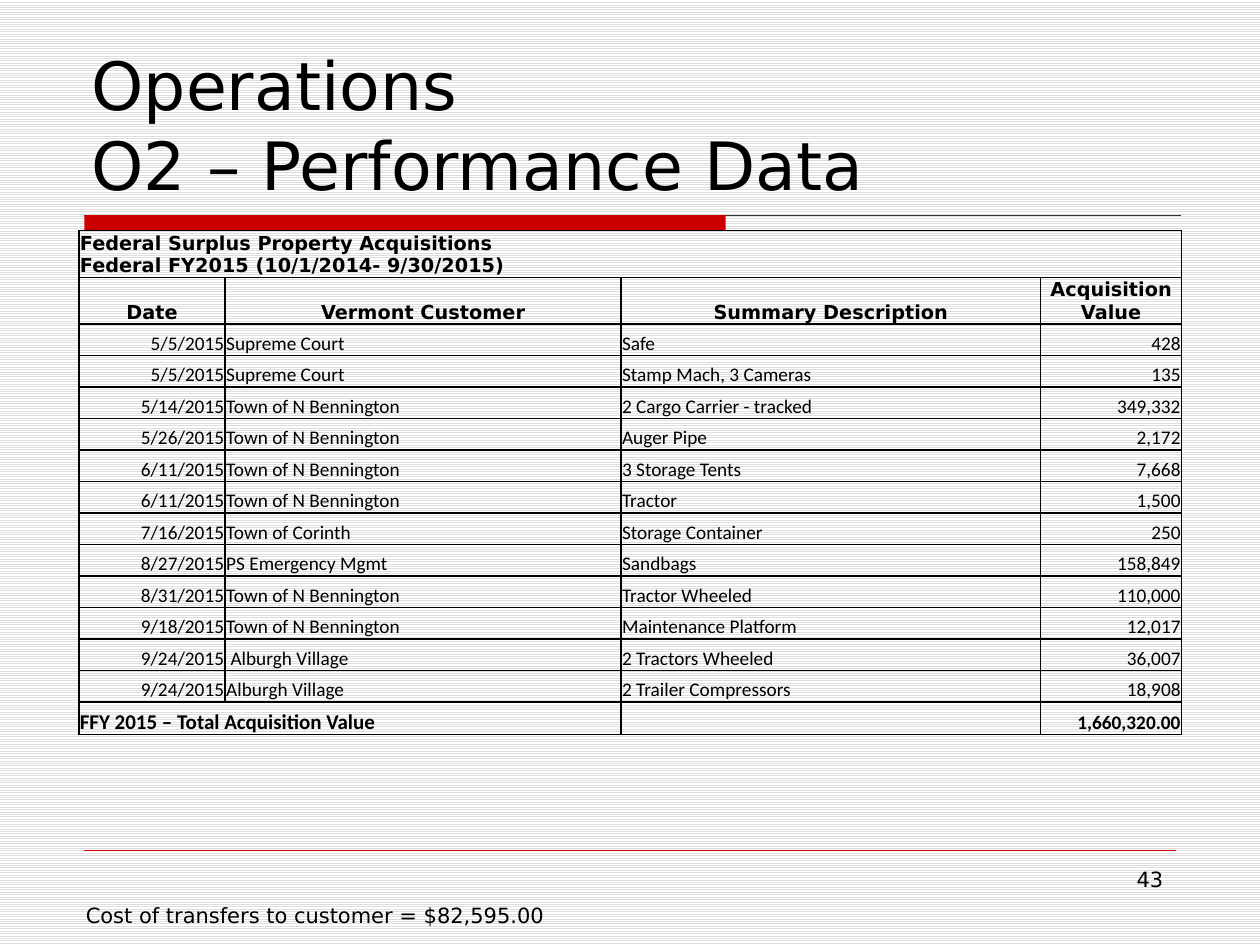
from dataclasses import dataclass

from lxml import etree
from pptx import Presentation
from pptx.dml.color import RGBColor
from pptx.enum.dml import MSO_PATTERN
from pptx.enum.shapes import MSO_CONNECTOR, MSO_SHAPE
from pptx.enum.text import MSO_ANCHOR, MSO_AUTO_SIZE, PP_ALIGN
from pptx.oxml.ns import qn
from pptx.util import Cm, Pt

LEFT, CENTER, RIGHT = PP_ALIGN.LEFT, PP_ALIGN.CENTER, PP_ALIGN.RIGHT
BOTTOM, TOP = MSO_ANCHOR.BOTTOM, MSO_ANCHOR.TOP
RECTANGLE, STRAIGHT = MSO_SHAPE.RECTANGLE, MSO_CONNECTOR.STRAIGHT
TITLE_ONLY = 5

SANS, BODY = "DejaVu Sans", "Calibri"
BLACK, RED, DARK = "000000", "CC0000", "333333"

TABLE_TITLE = "Federal Surplus Property Acquisitions\nFederal FY2015 (10/1/2014- 9/30/2015)"
HEADERS = ["Date", "Vermont Customer", "Summary Description", "Acquisition Value"]
COL_WIDTHS = [2.95, 7.98, 8.46, 2.84]
COL_ALIGNS = [RIGHT, LEFT, LEFT, RIGHT]
HEADER_HEIGHT, BODY_HEIGHT, TOTAL_HEIGHT = 0.94, 7.62 / 12, 0.66


@dataclass
class Acquisition:
    date: str
    customer: str
    item: str
    value: str


@dataclass
class Rule:
    x1: float
    x2: float
    y: float
    color: str
    width: float


@dataclass
class Style:
    font: str
    size: float
    bold: bool = False
    align: PP_ALIGN = LEFT


ACQUISITIONS = [
    Acquisition("5/5/2015", "Supreme Court", "Safe", "428"),
    Acquisition("5/5/2015", "Supreme Court", "Stamp Mach, 3 Cameras", "135"),
    Acquisition("5/14/2015", "Town of N Bennington", "2 Cargo Carrier - tracked", "349,332"),
    Acquisition("5/26/2015", "Town of N Bennington", "Auger Pipe", "2,172"),
    Acquisition("6/11/2015", "Town of N Bennington", "3 Storage Tents", "7,668"),
    Acquisition("6/11/2015", "Town of N Bennington", "Tractor", "1,500"),
    Acquisition("7/16/2015", "Town of Corinth", "Storage Container", "250"),
    Acquisition("8/27/2015", "PS Emergency Mgmt", "Sandbags", "158,849"),
    Acquisition("8/31/2015", "Town of N Bennington", "Tractor Wheeled", "110,000"),
    Acquisition("9/18/2015", "Town of N Bennington", "Maintenance Platform", "12,017"),
    Acquisition("9/24/2015", " Alburgh Village", "2 Tractors Wheeled", "36,007"),
    Acquisition("9/24/2015", "Alburgh Village", "2 Trailer Compressors", "18,908"),
]
RULES = [
    Rule(1.7, 23.8, 4.34, DARK, 0.75),
    Rule(1.7, 23.7, 17.15, RED, 0.25),
]


def rgb(color: str) -> RGBColor:
    return RGBColor.from_string(color)


def write(tf, text: str, style: Style) -> None:
    tf.text = text
    for p in tf.paragraphs:
        p.alignment = style.align
        for r in p.runs:
            r.font.name = style.font
            r.font.size = Pt(style.size)
            r.font.bold = style.bold
            r.font.color.rgb = rgb(BLACK)


def place(sp, left: float, top: float, width: float, height: float) -> None:
    sp.left, sp.top, sp.width, sp.height = Cm(left), Cm(top), Cm(width), Cm(height)


def add_text(s, left: float, top: float, width: float, height: float,
             text: str, style: Style) -> None:
    sp = s.shapes.add_textbox(Cm(left), Cm(top), Cm(width), Cm(height))
    sp.text_frame.word_wrap = True
    sp.text_frame.vertical_anchor = TOP
    write(sp.text_frame, text, style)


def add_rule(s, rule: Rule) -> None:
    line = s.shapes.add_connector(STRAIGHT, Cm(rule.x1), Cm(rule.y), Cm(rule.x2), Cm(rule.y))
    line.line.color.rgb = rgb(rule.color)
    line.line.width = Pt(rule.width)
    etree.SubElement(line._element.spPr, qn("a:effectLst"))


def format_cell(cell) -> None:
    """Set tight margins, a thin border all round and no fill."""
    cell.margin_left = cell.margin_right = cell.margin_top = Cm(0.02)
    cell.margin_bottom = 0
    cell.vertical_anchor = BOTTOM
    tc_pr = cell._tc.get_or_add_tcPr()
    for side in ("a:lnL", "a:lnR", "a:lnT", "a:lnB"):
        ln = etree.SubElement(tc_pr, qn(side), w=str(Pt(1)))
        fill = etree.SubElement(ln, qn("a:solidFill"))
        etree.SubElement(fill, qn("a:srgbClr"), val=BLACK)
    cell.fill.background()
    # Keeps an empty cell from growing its row
    end = cell.text_frame.paragraphs[0]._p.get_or_add_endParaRPr()
    end.set("sz", "1100")


def add_acquisition_table(s) -> None:
    heights = [HEADER_HEIGHT] * 2 + [BODY_HEIGHT] * len(ACQUISITIONS) + [TOTAL_HEIGHT]
    frame = s.shapes.add_table(len(heights), len(COL_WIDTHS), Cm(1.59), Cm(4.65),
                               Cm(sum(COL_WIDTHS)), Cm(sum(heights)))
    table = frame.table
    table.first_row = table.horz_banding = False
    for column, width in zip(table.columns, COL_WIDTHS):
        column.width = Cm(width)
    for row, height in zip(table.rows, heights):
        row.height = Cm(height)
    for cell in table.iter_cells():
        format_cell(cell)

    last = len(heights) - 1
    table.cell(0, 0).merge(table.cell(0, 3))
    table.cell(last, 0).merge(table.cell(last, 1))
    write(table.cell(0, 0).text_frame, TABLE_TITLE, Style(SANS, 11, True))
    for col, header in enumerate(HEADERS):
        write(table.cell(1, col).text_frame, header, Style(SANS, 11, True, CENTER))
    for row, a in enumerate(ACQUISITIONS, start=2):
        values = (a.date, a.customer, a.item, a.value)
        for col, (value, align) in enumerate(zip(values, COL_ALIGNS)):
            write(table.cell(row, col).text_frame, value, Style(BODY, 11, align=align))
    write(table.cell(last, 0).text_frame, "FFY 2015 – Total Acquisition Value",
          Style(BODY, 12, True))
    write(table.cell(last, 3).text_frame, "1,660,320.00", Style(BODY, 11, True, RIGHT))


def main() -> None:
    prs = Presentation()
    prs.slide_width, prs.slide_height = Cm(25.4), Cm(19.05)
    s = prs.slides.add_slide(prs.slide_layouts[TITLE_ONLY])

    fill = s.background.fill
    fill.patterned()
    fill.pattern = MSO_PATTERN.LIGHT_HORIZONTAL
    fill.fore_color.rgb = rgb("DDDDDD")
    fill.back_color.rgb = rgb("FFFFFF")

    for rule in RULES:
        add_rule(s, rule)
    bar = s.shapes.add_shape(RECTANGLE, Cm(1.7), Cm(4.34), Cm(12.93), Cm(0.3))
    bar.shadow.inherit = False
    bar.fill.solid()
    bar.fill.fore_color.rgb = rgb(RED)
    bar.line.fill.background()

    title = s.shapes.title
    place(title, 1.59, 0.85, 22.23, 3.39)
    title.text_frame.vertical_anchor = BOTTOM
    title.text_frame.auto_size = MSO_AUTO_SIZE.NONE
    write(title.text_frame, "Operations\vO2 – Performance Data", Style(SANS, 38))

    add_acquisition_table(s)
    add_text(s, 18.2, 17.35, 5.5, 1.32, "43", Style(SANS, 12, align=RIGHT))
    add_text(s, 1.48, 18.06, 20.75, 0.77, "Cost of transfers to customer = $82,595.00",
             Style(SANS, 12))
    prs.save("out.pptx")


if __name__ == "__main__":
    main()
